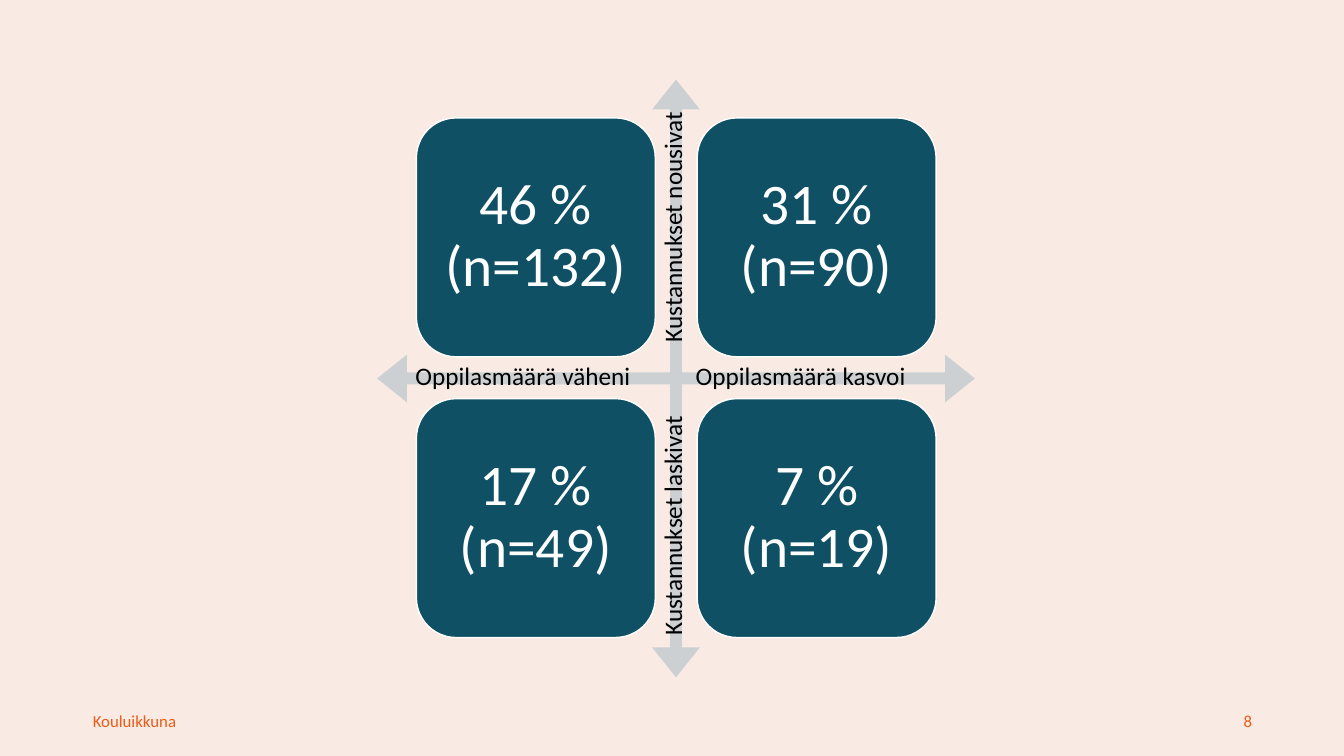
from dataclasses import dataclass

from pptx import Presentation
from pptx.dml.color import RGBColor
from pptx.enum.shapes import MSO_SHAPE
from pptx.enum.text import MSO_ANCHOR, PP_ALIGN
from pptx.shapes.autoshape import Shape
from pptx.slide import Slide
from pptx.util import Inches, Pt

COLORS = {
    "background": "F9EBE3",
    "accent": "EB5C18",
    "arrow": "CCD0D3",
    "tile": "0F5064",
    "white": "FFFFFF",
    "black": "000000",
}
FONT = "Calibri"
TILE_SIZE = 2.37
TILE_LEFT, TILE_TOP = 4.13, 1.17
TILE_STEP = 2.785


@dataclass
class Label:
    text: str
    left: float
    top: float
    width: float
    height: float = 0.3
    rotation: int = 0
    size: int = 18
    color: str = "black"
    align: PP_ALIGN = PP_ALIGN.LEFT
    anchor: MSO_ANCHOR = MSO_ANCHOR.TOP


TILES = [["46 % (n=132)", "31 % (n=90)"], ["17 % (n=49)", "7 % (n=19)"]]
AXIS_LABELS = [
    Label("Oppilasmäärä väheni", 4.12, 3.57, 2.31),
    Label("Oppilasmäärä kasvoi", 6.9, 3.57, 2.27),
    Label("Kustannukset nousivat", 5.36, 1.94, 2.61, rotation=270),
    Label("Kustannukset laskivat", 5.36, 4.85, 2.61, rotation=270),
]
FOOTER_LABELS = [
    Label("Kouluikkuna", 0.92, 6.96, 4.02, 0.38, size=12, color="accent",
          anchor=MSO_ANCHOR.MIDDLE),
    Label("8", 9.42, 6.96, 3, 0.38, size=12, color="accent",
          align=PP_ALIGN.RIGHT, anchor=MSO_ANCHOR.MIDDLE),
]


def rgb(name: str) -> RGBColor:
    return RGBColor.from_string(COLORS[name])


def write_text(shape: Shape, text: str, *, size: int, color: str, align: PP_ALIGN,
               anchor: MSO_ANCHOR, inset: float = 0, line_spacing: float = 1.0) -> None:
    frame = shape.text_frame
    frame.word_wrap = True
    frame.vertical_anchor = anchor
    frame.margin_left = frame.margin_right = Inches(inset)
    frame.margin_top = frame.margin_bottom = Inches(inset)
    para = frame.paragraphs[0]
    para.alignment = align
    para.line_spacing = line_spacing
    span = para.add_run()
    span.text = text
    span.font.name = FONT
    span.font.size = Pt(size)
    span.font.color.rgb = rgb(color)


def add_arrows(page: Slide) -> None:
    arrows = page.shapes.add_shape(
        MSO_SHAPE.QUAD_ARROW, Inches(3.74), Inches(0.79), Inches(5.93), Inches(5.93))
    for index, value in enumerate((0.02, 0.04, 0.05)):
        arrows.adjustments[index] = value
    arrows.shadow.inherit = False
    arrows.fill.solid()
    arrows.fill.fore_color.rgb = rgb("arrow")
    arrows.line.fill.background()


def add_tile(page: Slide, text: str, row: int, column: int) -> None:
    tile = page.shapes.add_shape(
        MSO_SHAPE.ROUNDED_RECTANGLE,
        Inches(TILE_LEFT + column * TILE_STEP), Inches(TILE_TOP + row * TILE_STEP),
        Inches(TILE_SIZE), Inches(TILE_SIZE))
    tile.shadow.inherit = False
    tile.fill.solid()
    tile.fill.fore_color.rgb = rgb("tile")
    tile.line.color.rgb = rgb("white")
    tile.line.width = Pt(1)
    write_text(tile, text, size=41, color="white", align=PP_ALIGN.CENTER,
               anchor=MSO_ANCHOR.MIDDLE, inset=0.16, line_spacing=0.9)


def add_label(page: Slide, label: Label) -> None:
    box = page.shapes.add_textbox(
        Inches(label.left), Inches(label.top), Inches(label.width), Inches(label.height))
    box.rotation = label.rotation
    write_text(box, label.text, size=label.size, color=label.color,
               align=label.align, anchor=label.anchor)


def main() -> None:
    deck = Presentation()
    deck.slide_width, deck.slide_height = Inches(13.33), Inches(7.5)
    page = deck.slides.add_slide(deck.slide_layouts[6])
    page.background.fill.solid()
    page.background.fill.fore_color.rgb = rgb("background")
    add_arrows(page)
    for row, texts in enumerate(TILES):
        for column, text in enumerate(texts):
            add_tile(page, text, row, column)
    for label in AXIS_LABELS + FOOTER_LABELS:
        add_label(page, label)
    deck.save("out.pptx")


if __name__ == "__main__":
    main()
